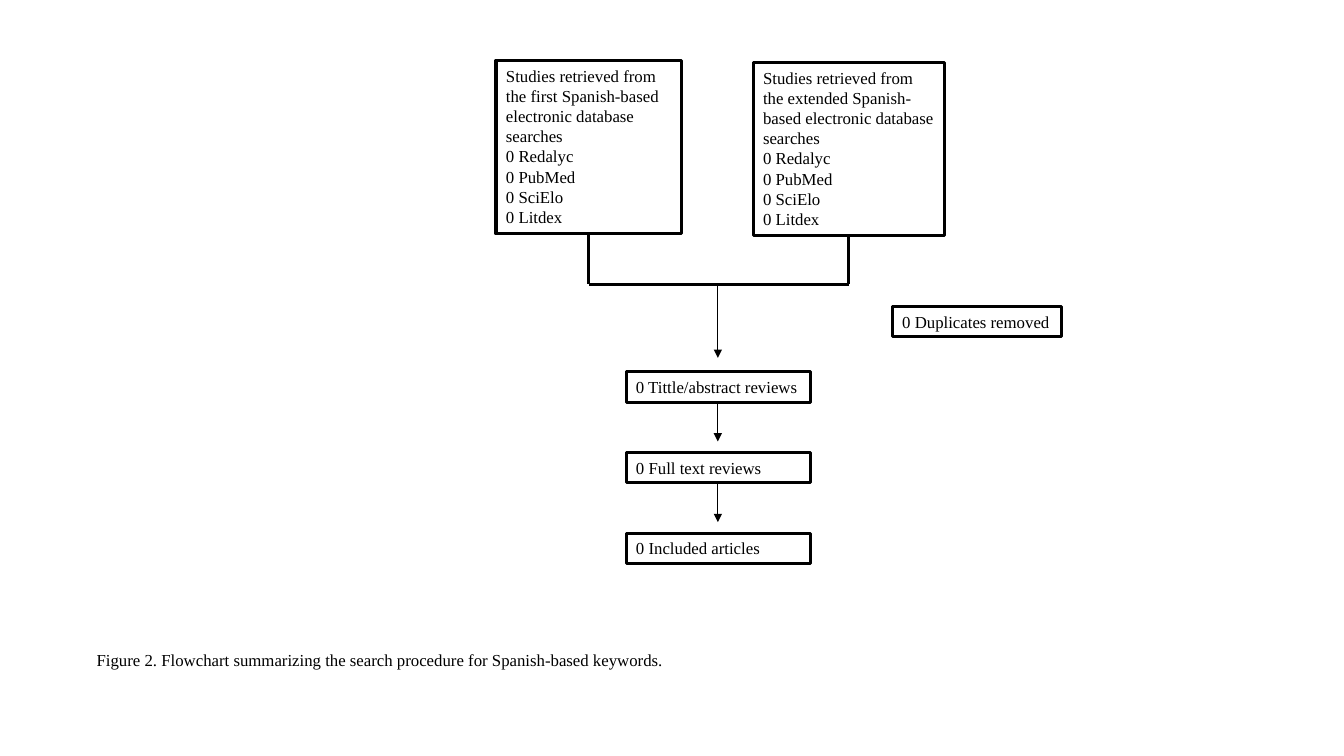
from lxml.etree import SubElement
from pptx import Presentation
from pptx.dml.color import RGBColor as Rgb
from pptx.enum.shapes import MSO_CONNECTOR as Conn, MSO_SHAPE as Shape
from pptx.enum.text import MSO_ANCHOR as Anchor, PP_ALIGN as Align
from pptx.oxml.ns import qn
from pptx.util import Emu, Pt

FONT, INK = "Times New Roman", "000000"
BASES = ["Redalyc", "PubMed", "SciElo", "Litdex"]
STEPS = ["Tittle/abstract reviews", "Full text reviews", "Included articles"]


def px(num):
    """Turn px, 100 to the inch, into EMU."""
    return Emu(num * 9144)


def hue(code):
    """Turn a hex string into a colour."""
    return Rgb.from_string(code)


def write(shape, text, wrap):
    """Fill a shape with plain left-aligned text."""
    frame = shape.text_frame
    frame.text = text
    frame.word_wrap = wrap
    frame.vertical_anchor = Anchor.TOP
    for para in frame.paragraphs:
        para.alignment = Align.LEFT
        font = para.runs[0].font
        font.name, font.size = FONT, Pt(12)
        font.color.rgb = hue(INK)


def frame_box(slide, box, text, wrap=True):
    """Draw an outlined box with text."""
    shape = slide.shapes.add_shape(Shape.RECTANGLE, *map(px, box))
    shape.shadow.inherit = False
    shape.fill.background()
    shape.line.color.rgb = hue(INK)
    shape.line.width = Pt(2.25)
    write(shape, text, wrap)


def link(slide, start, end, arrow=False):
    """Draw a thick line or a thin arrow between two points."""
    line = slide.shapes.add_connector(Conn.STRAIGHT, *map(px, start + end))
    line.line.color.rgb = hue(INK)
    line.line.width = Pt(0.5 if arrow else 2.25)
    if arrow:
        SubElement(line.line._get_or_add_ln(), qn("a:tailEnd"), type="triangle")
    SubElement(line._element.spPr, qn("a:effectLst"))


def sources(slide, boxes, bar):
    """Draw the search boxes and the bracket that joins them at bar."""
    mids = []
    for kind, box in zip(["first", "extended"], boxes):
        left, top, width, height = box
        head = f"Studies retrieved from the {kind} Spanish-based electronic database searches"
        frame_box(slide, box, "\n".join([head] + [f"0 {name}" for name in BASES]))
        mids.append(left + width // 2)
        link(slide, (mids[-1], top + height), (mids[-1], bar))
    link(slide, (mids[0], bar), (mids[1], bar))


def steps(slide, box, pitch, bar):
    """Stack the review steps, each with an arrow leading in."""
    left, top, width, height = box
    mid = left + width // 2
    link(slide, (mid, bar), (mid, top - 14), True)
    for i, name in enumerate(STEPS):
        y = top + i * pitch
        frame_box(slide, (left, y, width, height), f"0 {name}", i > 0)
        if i < len(STEPS) - 1:
            link(slide, (mid, y + height), (mid, y + pitch - 11), True)


def caption(slide, box):
    """Write the figure caption."""
    shape = slide.shapes.add_textbox(*map(px, box))
    write(shape, "Figure 2. Flowchart summarizing the search procedure for Spanish-based keywords.", False)


def main():
    """Build and save the flowchart slide."""
    deck = Presentation()
    deck.slide_width, deck.slide_height = px(1333), px(750)
    slide = deck.slides.add_slide(deck.slide_layouts[6])
    bar = 282
    sources(slide, [(492, 60, 184, 172), (747, 62, 190, 172)], bar)
    frame_box(slide, (885, 304, 168, 30), "0 Duplicates removed", False)
    steps(slide, (621, 369, 183, 30), 80, bar)
    caption(slide, (86, 640, 589, 61))
    deck.save("out.pptx")


if __name__ == "__main__":
    main()
